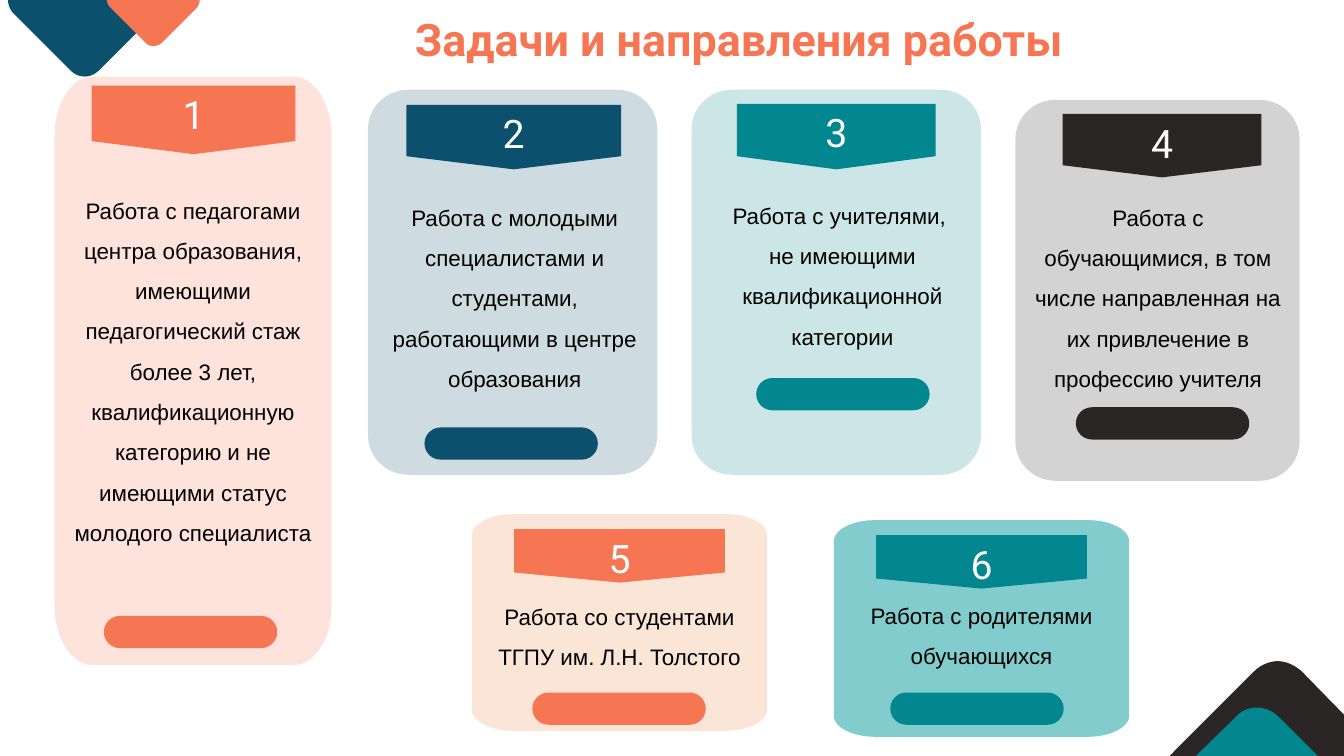
"""Build a slide of six numbered task cards with corner decorations."""
from collections import namedtuple

from lxml.etree import SubElement
from pptx import Presentation
from pptx.dml.color import RGBColor
from pptx.enum.shapes import MSO_SHAPE
from pptx.enum.text import MSO_ANCHOR, MSO_AUTO_SIZE, PP_ALIGN
from pptx.oxml.ns import qn
from pptx.util import Pt

PX = 9144
STEPS = 10
CORAL, NAVY, TEAL, DARK = "F67654", "0B506C", "02868F", "2A2625"

Card = namedtuple("Card", "color tint opacity panel radii banner notch pill text lines")
CARDS = [
    Card(CORAL, CORAL, 20, (54, 76, 275, 584), (38, 59), (91, 85, 202, 68), 13,
         (103, 611), (58, 177, 373),
         ["Работа с педагогами центра образования, имеющими педагогический стаж "
          "более 3 лет, квалификационную категорию и не имеющими статус "
          "молодого специалиста"]),
    Card(NAVY, NAVY, 20, (365, 89, 287, 382), (40, 39), (403, 104, 213, 64), 13,
         (421, 424), (377, 184, 212),
         ["Работа с молодыми специалистами и студентами, работающими в центре "
          "образования"]),
    Card(TEAL, TEAL, 20, (686, 89, 287, 382), (40, 39), (731, 103, 197, 65), 13,
         (750, 375), (702, 182, 172),
         ["Работа с учителями, ", "не имеющими квалификационной категории"]),
    Card(DARK, DARK, 20, (1007, 99, 282, 378), (40, 39), (1054, 113, 197, 63), 12,
         (1067, 404), (1015, 184, 212),
         ["Работа с обучающимися, в том числе направленная на их привлечение "
          "в профессию учителя"]),
    Card(CORAL, "FBE5D6", 100, (468, 510, 293, 215), (41, 21), (510, 525, 209, 53), 10,
         (528, 687), (481, 580, 91),
         ["Работа со студентами ТГПУ им. Л.Н. Толстого"]),
    Card(TEAL, "82CCCD", 100, (827, 516, 293, 215), (41, 21), (869, 531, 209, 53), 10,
         (883, 687), (840, 579, 91),
         ["Работа с родителями обучающихся"]),
]

DECORATIONS = [
    (NAVY, [(8, 0), (160, 0), (160, 5, 158, 10, 154, 14), (98, 70),
            (90, 78, 78, 78, 70, 70), (14, 14), (10, 10, 8, 5, 8, 0)]),
    (CORAL, [(106, 0), (198, 0), (198, 3, 197, 6, 195, 8), (161, 42),
             (156, 47, 148, 47, 144, 42), (110, 8), (108, 6, 106, 3, 106, 0)]),
    (DARK, [(1267, 656), (1276, 656, 1284, 660, 1291, 666), (1333, 709), (1333, 750),
            (1160, 750), (1244, 666), (1250, 660, 1259, 656, 1267, 656)]),
    (TEAL, [(1247, 702), (1254, 702, 1262, 705, 1268, 711), (1307, 750), (1186, 750),
            (1226, 711), (1231, 705, 1239, 702, 1247, 702)]),
]


def px(*lengths):
    """Turn px into EMU."""
    return [round(n * PX) for n in lengths]


def rgb(color):
    """Turn a hex string into a colour."""
    return RGBColor.from_string(color)


def paint(sp, color, opacity=100):
    """Fill a shape flatly, without line or shadow."""
    sp.shadow.inherit = False
    sp.line.fill.background()
    sp.fill.solid()
    sp.fill.fore_color.rgb = rgb(color)
    if opacity < 100:
        clr = sp._element.spPr.find(".//" + qn("a:srgbClr"))
        SubElement(clr, qn("a:alpha"), val=str(opacity * 1000))


def flatten(path):
    """Turn points and cubic curves into a list of points."""
    points = []
    for item in path:
        if len(item) == 2:
            points.append(item)
            continue
        ends = [points[-1], item[:2], item[2:4], item[4:]]
        for i in range(1, STEPS + 1):
            t = i / STEPS
            weights = (1 - t) ** 3, 3 * t * (1 - t) ** 2, 3 * t * t * (1 - t), t ** 3
            points.append(tuple(sum(w * e[axis] for w, e in zip(weights, ends))
                                for axis in (0, 1)))
    return points


def add_outline(slide, path, color, opacity=100):
    """Draw a closed outline and return it."""
    points = [px(*point) for point in flatten(path)]
    builder = slide.shapes.build_freeform(*points[0])
    builder.add_line_segments(points[1:], close=True)
    sp = builder.convert_to_shape()
    paint(sp, color, opacity)
    return sp


def add_panel(slide, box, radii, color, opacity):
    """Draw a panel with elliptical corners."""
    x, y, w, h = box
    rx, ry = radii
    r, b = x + w, y + h
    cx, cy = rx * 0.45, ry * 0.45
    add_outline(slide, [
        (x + rx, y), (r - rx, y), (r - cx, y, r, y + cy, r, y + ry),
        (r, b - ry), (r, b - cy, r - cx, b, r - rx, b),
        (x + rx, b), (x + cx, b, x, b - cy, x, b - ry),
        (x, y + ry), (x, y + cy, x + cx, y, x + rx, y),
    ], color, opacity)


def write(tf, lines, font, size, color, spacing=1.0, bold=False):
    """Write centred paragraphs from the top of a text frame."""
    tf.word_wrap = True
    tf.vertical_anchor = MSO_ANCHOR.TOP
    tf.text = "\n".join(lines)
    for p in tf.paragraphs:
        p.alignment = PP_ALIGN.CENTER
        p.line_spacing = spacing
        p.font.name, p.font.size, p.font.bold = font, Pt(size), bold
        p.font.color.rgb = rgb(color)


def add_banner(slide, box, notch, color, number):
    """Draw a numbered banner with a pointed lower edge."""
    x, y, w, h = box
    side = y + h - notch
    sp = add_outline(slide, [(x, y), (x + w, y), (x + w, side),
                             (x + w / 2, y + h), (x, side)], color)
    write(sp.text_frame, [str(number)], "Roboto", 28, "FFFFFF")


def add_pill(slide, x, y, color):
    """Draw a pill."""
    sp = slide.shapes.add_shape(MSO_SHAPE.ROUNDED_RECTANGLE, *px(x, y, 172, 32))
    sp.adjustments[0] = 0.5
    paint(sp, color)


def add_text(slide, x, y, h, lines):
    """Add the text of a card."""
    tf = slide.shapes.add_textbox(*px(x, y, 267, h)).text_frame
    write(tf, lines, "Arial", 16, "000000", spacing=1.5)
    tf.auto_size = MSO_AUTO_SIZE.SHAPE_TO_FIT_TEXT


def add_card(slide, number, card):
    """Add one numbered card."""
    add_panel(slide, card.panel, card.radii, card.tint, card.opacity)
    add_banner(slide, card.banner, card.notch, card.color, number)
    add_pill(slide, *card.pill, card.color)
    add_text(slide, *card.text, card.lines)


def set_title(slide, text):
    """Place and format the title."""
    sp = slide.shapes.title
    sp.left, sp.top, sp.width, sp.height = px(238, 7, 990, 64)
    write(sp.text_frame, [text], "Roboto", 32, CORAL, bold=True)
    sp.text_frame.auto_size = MSO_AUTO_SIZE.SHAPE_TO_FIT_TEXT


def main():
    """Build and save the slide."""
    prs = Presentation()
    prs.slide_width, prs.slide_height = px(1333, 750)
    slide = prs.slides.add_slide(prs.slide_layouts[5])
    set_title(slide, "Задачи и направления работы")
    for color, path in DECORATIONS:
        add_outline(slide, path, color)
    for number, card in enumerate(CARDS, 1):
        add_card(slide, number, card)
    prs.save("out.pptx")


if __name__ == "__main__":
    main()
